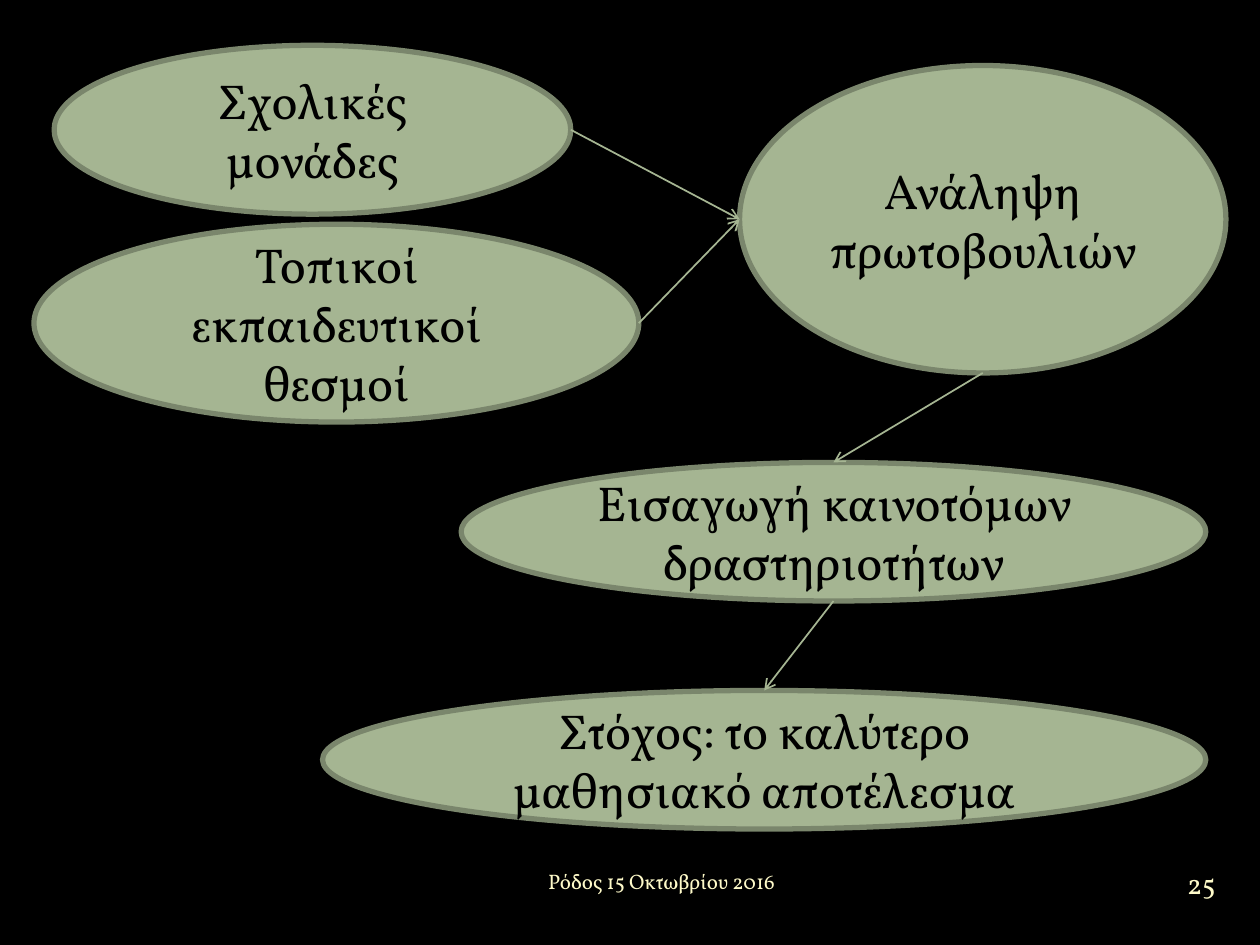
from pptx import Presentation
from pptx.dml.color import RGBColor
from pptx.enum.shapes import MSO_CONNECTOR, MSO_SHAPE
from pptx.enum.text import MSO_ANCHOR, PP_ALIGN
from pptx.oxml.ns import qn
from pptx.util import Inches, Pt
from lxml.etree import SubElement

COLORS = {"background": "000000", "fill": "A5B592", "outline": "7A866C",
          "text": "000000", "footer": "FEFAC9"}

# name: (text, (left, top, width, height))
STEPS = {
    "schools": ("Σχολικές μονάδες", (0.43, 0.36, 4.1, 1.34)),
    "initiative": ("Ανάληψη πρωτοβουλιών", (5.87, 0.52, 3.86, 2.44)),
    "institutions": ("Τοπικοί εκπαιδευτικοί θεσμοί", (0.27, 1.78, 4.8, 1.57)),
    "activities": ("Εισαγωγή καινοτόμων δραστηριοτήτων", (3.66, 3.67, 5.91, 1.1)),
    "goal": ("Στόχος: το καλύτερο μαθησιακό αποτέλεσμα", (2.56, 5.48, 7.01, 1.1)),
}
LINKS = [
    ("schools", "right", "initiative", "left"),
    ("institutions", "right", "initiative", "left"),
    ("initiative", "bottom", "activities", "top"),
    ("activities", "bottom", "goal", "top"),
]
SIDES = {"left": (0, 0.5), "right": (1, 0.5), "top": (0.5, 0), "bottom": (0.5, 1)}


def rgb(name):
    return RGBColor.from_string(COLORS[name])


def write(sp, text, size, color, align=PP_ALIGN.CENTER):
    tf = sp.text_frame
    tf.word_wrap = True
    tf.vertical_anchor = MSO_ANCHOR.MIDDLE
    p = tf.paragraphs[0]
    p.alignment = align
    r = p.add_run()
    r.text = text
    for key, value in {"name": "Vollkorn", "size": Pt(size)}.items():
        setattr(r.font, key, value)
    r.font.color.rgb = rgb(color)
    return tf


def add_step(s, text, box):
    sp = s.shapes.add_shape(MSO_SHAPE.OVAL, *map(Inches, box))
    sp.shadow.inherit = False
    sp.fill.solid()
    sp.fill.fore_color.rgb = rgb("fill")
    sp.line.color.rgb = rgb("outline")
    sp.line.width = Pt(3)
    write(sp, text, 28, "text")
    return sp


def side_point(sp, side):
    fx, fy = SIDES[side]
    return int(sp.left + fx * sp.width), int(sp.top + fy * sp.height)


def add_arrow(s, start, end):
    line = s.shapes.add_connector(MSO_CONNECTOR.STRAIGHT, *start, *end)
    line.line.color.rgb = rgb("fill")
    line.line.width = Pt(1)
    SubElement(line.line._get_or_add_ln(), qn("a:tailEnd"), type="arrow")
    SubElement(line._element.spPr, qn("a:effectLst"))


def add_flow(s):
    ovals = {name: add_step(s, *step) for name, step in STEPS.items()}
    for source, out_side, target, in_side in LINKS:
        add_arrow(s, side_point(ovals[source], out_side),
                  side_point(ovals[target], in_side))


def add_footer(s):
    number = s.shapes.add_textbox(*map(Inches, (9.2, 6.76, 0.67, 0.5)))
    tf = write(number, "25", 16, "footer")
    for side in SIDES:
        setattr(tf, f"margin_{side}", 0)
    date = s.shapes.add_textbox(*map(Inches, (2.33, 6.78, 3.92, 0.42)))
    write(date, "Ρόδος 15 Οκτωβρίου 2016", 12, "footer", PP_ALIGN.RIGHT)


def main():
    prs = Presentation()
    prs.slide_width, prs.slide_height = Inches(10), Inches(7.5)
    s = prs.slides.add_slide(prs.slide_layouts[6])
    s.background.fill.solid()
    s.background.fill.fore_color.rgb = rgb("background")
    add_footer(s)
    add_flow(s)
    prs.save("out.pptx")


if __name__ == "__main__":
    main()
